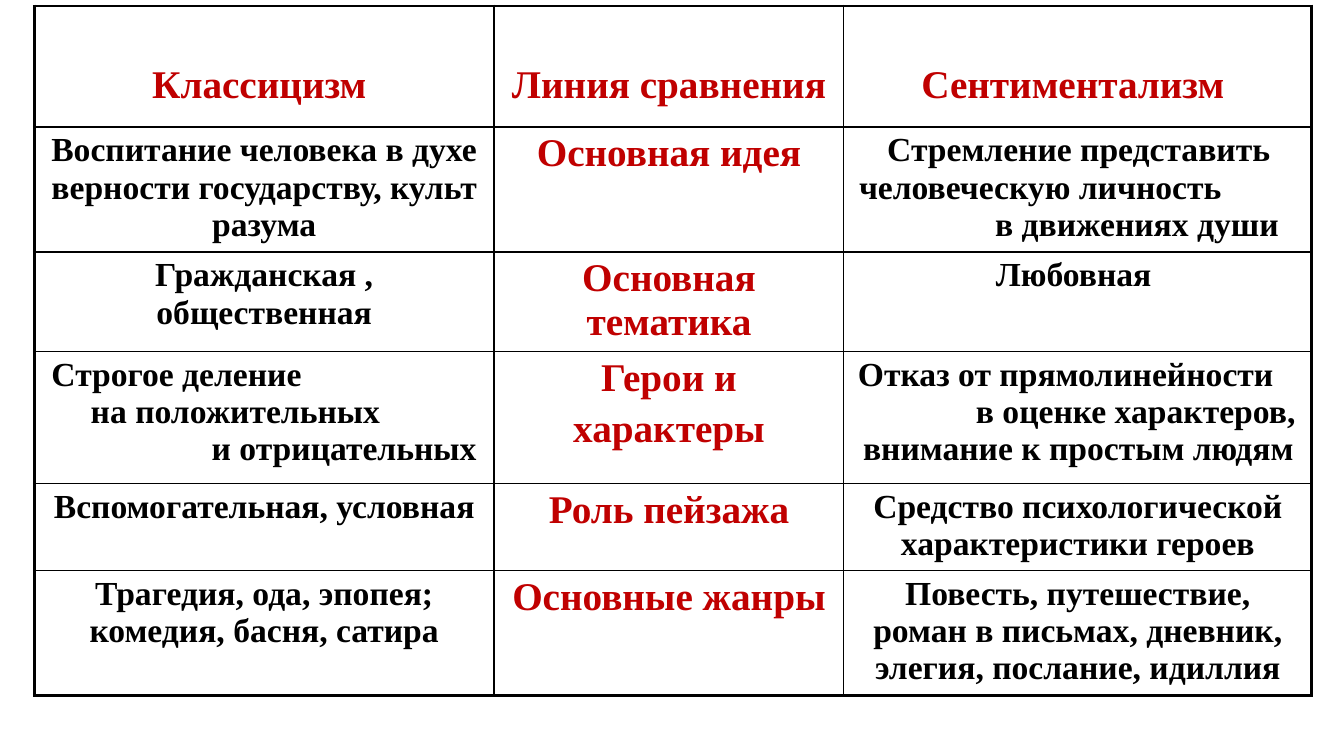
import pptx
import pptx.dml.color
import pptx.enum.text
import pptx.oxml
import pptx.oxml.ns
import pptx.util
from pptx.util import Inches

COLORS = {"heading": "C00000", "body": "000000", "border": "000000"}
FONT = "Times New Roman"

ROWS = [
    ["Классицизм ", "Линия сравнения", "Сентиментализм "],
    ["Воспитание человека в духе верности государству, культ разума",
     "Основная идея",
     [("Стремление представить", 0.3), ("человеческую личность", 0.02), ("в движениях души", 1.37)]],
    ["Гражданская , общественная", "Основная тематика", "Любовная "],
    [[("Строгое деление", 0.04), ("на положительных", 0.43), ("и отрицательных", 1.63)],
     "Герои и\nхарактеры",
     [("Отказ от прямолинейности", 0.01), ("в оценке характеров,", 1.18),
      ("внимание к простым людям", 0.06)]],
    ["Вспомогательная, условная", "Роль пейзажа", "Средство психологической характеристики героев"],
    ["Трагедия, ода, эпопея; комедия, басня, сатира",
     "Основные жанры",
     "Повесть, путешествие, роман в письмах, дневник, элегия, послание, идиллия"],
]
COLUMN_WIDTHS = [4.56, 3.47, 4.64]
ROW_HEIGHTS = [1.2, 1.24, 0.99, 1.31, 0.86, 1.24]
TABLE_LEFT, TABLE_TOP = 0.34, 0.06
THIN, THICK = 1, 2.25
HEADER_TOP_MARGIN = 0.57


def write_paragraph(paragraph, text, *, size, color, indent=None, space_before=0):
    alignments = pptx.enum.text.PP_ALIGN
    paragraph.alignment = alignments.CENTER if indent is None else alignments.LEFT
    if indent is not None:
        paragraph._p.get_or_add_pPr().set("marL", str(Inches(indent)))
    paragraph.space_before = pptx.util.Pt(space_before)
    run = paragraph.add_run()
    run.text = text
    run.font.name = FONT
    run.font.size = pptx.util.Pt(size)
    run.font.bold = True
    run.font.color.rgb = pptx.dml.color.RGBColor.from_string(COLORS[color])


def set_borders(cell, widths):
    properties = cell._tc.get_or_add_tcPr()
    for side, width in widths.items():
        properties.append(pptx.oxml.parse_xml(
            f'<a:ln{side} {pptx.oxml.ns.nsdecls("a")} w="{pptx.util.Pt(width)}">'
            f'<a:solidFill><a:srgbClr val="{COLORS["border"]}"/></a:solidFill></a:ln{side}>'))


def fill_cell(cell, content, row, column):
    is_heading = row == 0 or column == 1
    style = {"size": 28, "color": "heading"} if is_heading else {"size": 24, "color": "body"}
    cell.margin_left = cell.margin_right = Inches(0.13)
    cell.margin_top = Inches(HEADER_TOP_MARGIN if row == 0 else 0.05)
    cell.margin_bottom = Inches(0.05)
    set_borders(cell, {
        "L": THICK if column == 0 else THIN,
        "R": THICK if column == len(COLUMN_WIDTHS) - 1 else THIN,
        "T": THICK if row == 0 else THIN,
        "B": THICK if row == len(ROW_HEIGHTS) - 1 else THIN,
    })
    cell.fill.background()
    if isinstance(content, str):
        lines = [(text, None) for text in content.split("\n")]
    else:
        lines = content
    for index, (text, indent) in enumerate(lines):
        paragraph = cell.text_frame.add_paragraph() if index else cell.text_frame.paragraphs[0]
        gap = 5.6 if index and indent is None else 0
        write_paragraph(paragraph, text, indent=indent, space_before=gap, **style)


def main():
    presentation = pptx.Presentation()
    presentation.slide_width = Inches(13.33)
    presentation.slide_height = Inches(7.5)
    slide = presentation.slides.add_slide(presentation.slide_layouts[6])
    table = slide.shapes.add_table(
        len(ROW_HEIGHTS), len(COLUMN_WIDTHS), Inches(TABLE_LEFT), Inches(TABLE_TOP),
        Inches(sum(COLUMN_WIDTHS)), Inches(sum(ROW_HEIGHTS))).table
    table.first_row = False
    table.horz_banding = False
    for column, width in zip(table.columns, COLUMN_WIDTHS):
        column.width = Inches(width)
    for row, height in zip(table.rows, ROW_HEIGHTS):
        row.height = Inches(height)
    for row, contents in enumerate(ROWS):
        for column, content in enumerate(contents):
            fill_cell(table.cell(row, column), content, row, column)
    presentation.save("out.pptx")


if __name__ == "__main__":
    main()
